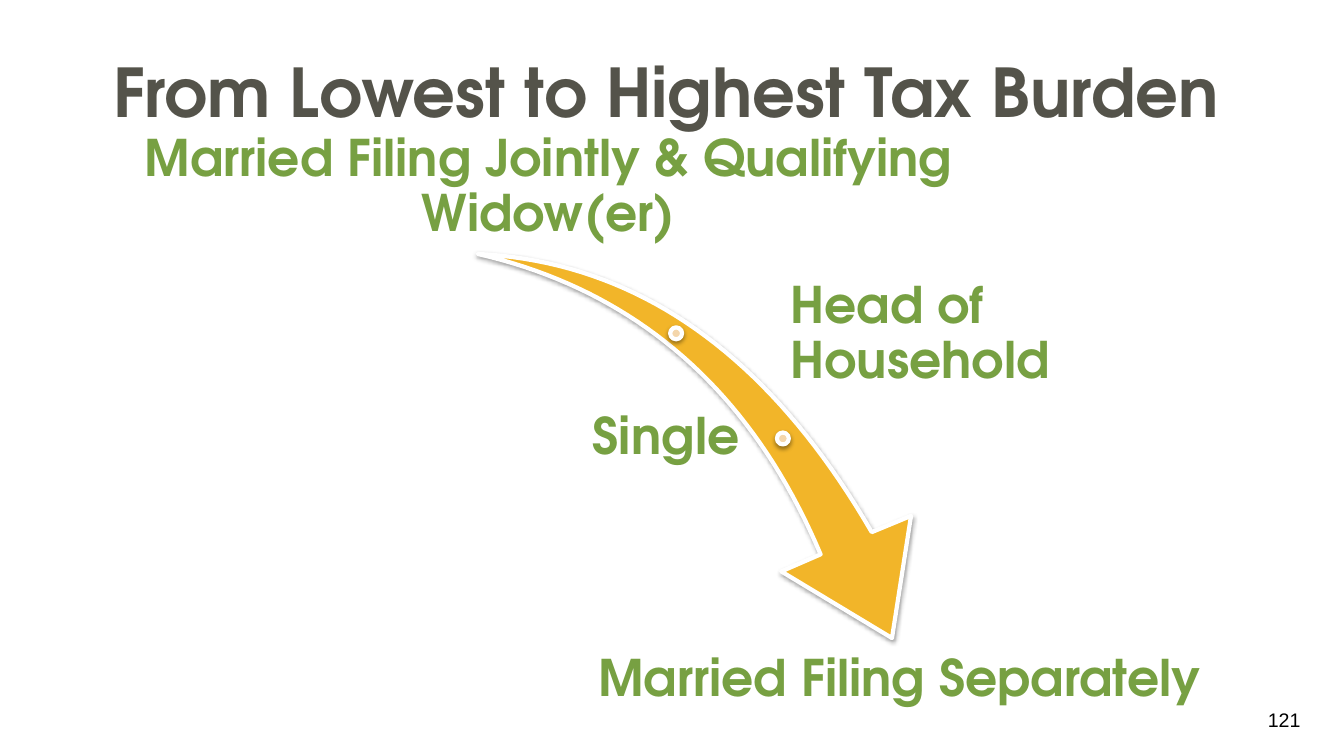
from dataclasses import dataclass

from lxml import etree
from pptx import Presentation
from pptx import util as u
from pptx.dml.color import RGBColor
from pptx.enum import shapes, text
from pptx.oxml import ns

Cm, Pt = u.Cm, u.Pt
Align, Anchor = text.PP_ALIGN, text.MSO_ANCHOR


@dataclass(frozen=True)
class Theme:
    heading_font: str = "TeX Gyre Adventor"
    number_font: str = "Arial"
    title: str = "54534A"
    label: str = "77A042"
    number: str = "000000"
    arrow: str = "F2B529"
    dot: str = "F4D6AB"
    outline: str = "FFFFFF"
    title_size: int = 48
    label_size: int = 36
    number_size: int = 14


THEME = Theme()


def add_text(page, content, left, top, width, height, *, size=THEME.label_size,
             color=THEME.label, font=THEME.heading_font, bold=True,
             align=Align.LEFT, anchor=Anchor.MIDDLE, spacing=0.9,
             inset_x=0.13, inset_y=0.13):
    box = page.shapes.add_textbox(Cm(left), Cm(top), Cm(width), Cm(height))
    frame = box.text_frame
    frame.word_wrap = True
    frame.vertical_anchor = anchor
    frame.margin_left = frame.margin_right = Cm(inset_x)
    frame.margin_top = frame.margin_bottom = Cm(inset_y)
    para = frame.paragraphs[0]
    para.alignment = align
    para.line_spacing = spacing
    span = para.add_run()
    span.text = content
    span.font.name = font
    span.font.size = Pt(size)
    span.font.bold = bold
    span.font.color.rgb = RGBColor.from_string(color)


def finish(shape, fill):
    """Apply the fill, white outline and soft shadow of the arrow graphic."""
    shape.fill.solid()
    shape.fill.fore_color.rgb = RGBColor.from_string(fill)
    shape.line.color.rgb = RGBColor.from_string(THEME.outline)
    shape.line.width = Pt(3)
    shape.shadow.inherit = False
    effects = shape.element.spPr.find(ns.qn("a:effectLst"))
    shadow = etree.SubElement(effects, ns.qn("a:outerShdw"), blurRad=str(Pt(3.1)),
                              dist=str(Pt(1.6)), dir="5400000", rotWithShape="0")
    color = etree.SubElement(shadow, ns.qn("a:srgbClr"), val="000000")
    etree.SubElement(color, ns.qn("a:alpha"), val="38000")


def curve(start, control_1, control_2, end, steps=40):
    """Points along a cubic curve, after its start."""
    points = []
    for step in range(1, steps + 1):
        t = step / steps
        weights = ((1 - t) ** 3, 3 * t * (1 - t) ** 2, 3 * t * t * (1 - t), t ** 3)
        corners = (start, control_1, control_2, end)
        points.append(tuple(sum(w * corner[axis] for w, corner in zip(weights, corners))
                            for axis in (0, 1)))
    return points


def add_arrow(page):
    tail, outer_neck, inner_neck = (12.04, 6.4), (21.97, 13.41), (20.68, 13.97)
    head = [(22.96, 13), (22.48, 16.08), (19.69, 14.4), inner_neck]
    outline = (curve(tail, (16.08, 6.6), (19.38, 8.94), outer_neck) + head
               + curve(inner_neck, (18.95, 9.86), (16.05, 7.32), tail))
    builder = page.shapes.build_freeform(Cm(tail[0]), Cm(tail[1]))
    builder.add_line_segments([(Cm(x), Cm(y)) for x, y in outline], close=True)
    finish(builder.convert_to_shape(), THEME.arrow)


def add_dot(page, left, top, size=0.3):
    dot = page.shapes.add_shape(shapes.MSO_SHAPE.OVAL, Cm(left), Cm(top), Cm(size), Cm(size))
    finish(dot, THEME.dot)


def main():
    deck = Presentation()
    deck.slide_width, deck.slide_height = Cm(33.87), Cm(19.05)
    page = deck.slides.add_slide(deck.slide_layouts[6])

    # Title
    add_text(page, "From Lowest to Highest Tax Burden", 1.55, 0.69, 30.48, 3.17,
             size=THEME.title_size, color=THEME.title, align=Align.CENTER,
             spacing=1.0, inset_x=0.25)

    # Arrow with its two stops
    add_arrow(page)
    add_dot(page, 16.89, 8.25)
    add_dot(page, 19.58, 10.9)

    # Filing statuses, lowest burden first
    add_text(page, "Married Filing Jointly & Qualifying Widow(er)", 0.91, 3.94, 25.83, 2.29,
             align=Align.CENTER, anchor=Anchor.BOTTOM)
    add_text(page, "Head of Household", 19.79, 7.29, 10.52, 2.29)
    add_text(page, "Single", 10.95, 9.91, 7.82, 2.29, align=Align.RIGHT)
    add_text(page, "Married Filing Separately", 12.4, 16.33, 20.55, 1.35,
             align=Align.CENTER, anchor=Anchor.TOP)

    # Page number
    add_text(page, "121", 31.7, 17.6, 2.03, 1.45, size=THEME.number_size,
             color=THEME.number, font=THEME.number_font, bold=False,
             anchor=Anchor.TOP, spacing=1.0, inset_x=0.25, inset_y=0.25)

    deck.save("out.pptx")


if __name__ == "__main__":
    main()
